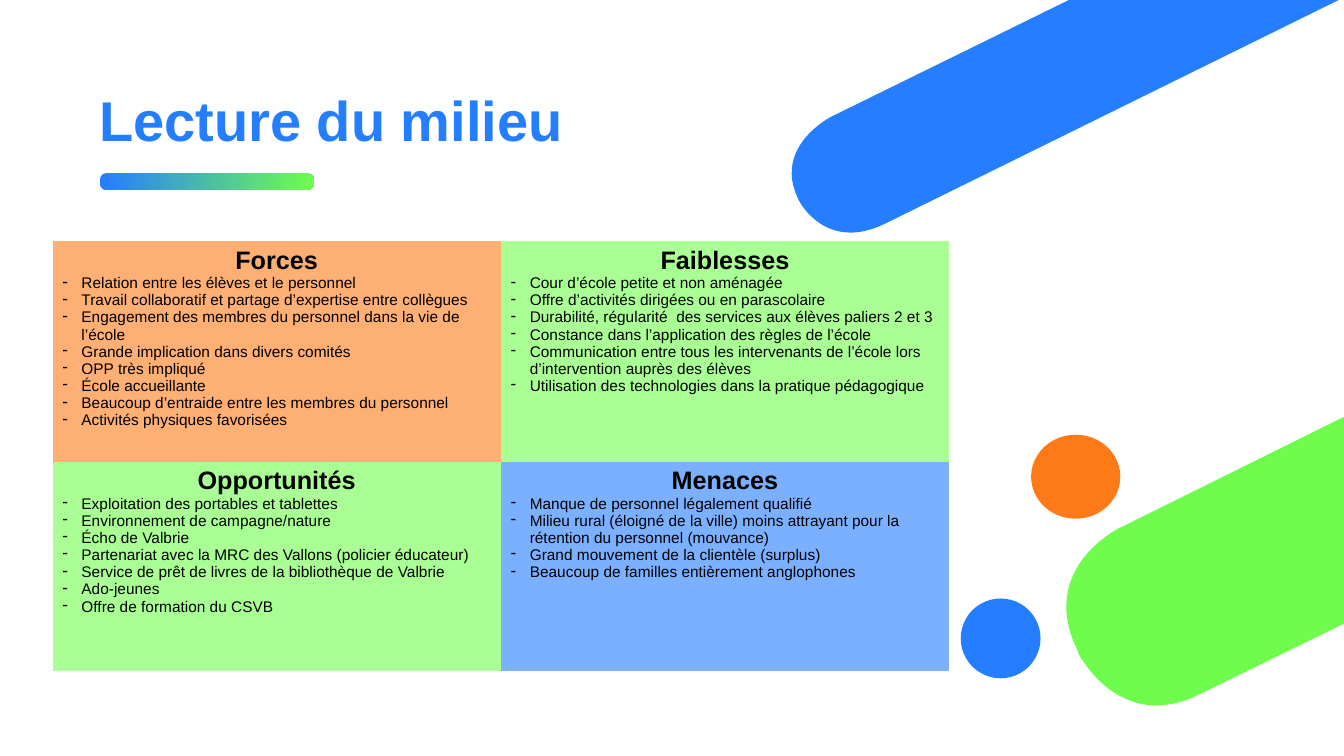
from dataclasses import dataclass
from typing import Any

from lxml.etree import SubElement
from pptx import Presentation
from pptx.dml.color import RGBColor
from pptx.enum.shapes import MSO_SHAPE
from pptx.enum.text import MSO_ANCHOR, MSO_AUTO_SIZE, PP_ALIGN
from pptx.oxml.ns import qn
from pptx.util import Pt

EMU_PER_PX = 9525
SLIDE_WIDTH, SLIDE_HEIGHT = 1280, 720
CURVE_STEPS = 24
FONT = "Arial"
NO_GRID_STYLE = "{2D5ABB26-0587-4C30-8999-92F81FD0307C}"

BLUE = RGBColor(0x25, 0x7D, 0xFF)
GREEN = RGBColor(0x6F, 0xFD, 0x4D)
ORANGE = RGBColor(0xFD, 0x7A, 0x17)
PALE_BLUE = RGBColor(0x7B, 0xB0, 0xFF)
PALE_GREEN = RGBColor(0xA9, 0xFE, 0x94)
PALE_ORANGE = RGBColor(0xFE, 0xAF, 0x74)
BLACK = RGBColor(0, 0, 0)

TITLE_FONT = {"name": FONT, "size": Pt(40), "bold": True}
HEADING_FONT = {"name": FONT, "size": Pt(18), "bold": True}
ITEM_FONT = {"name": FONT, "size": Pt(11), "bold": False}

Point = tuple[float, float]


@dataclass(frozen=True)
class Dot:
    left: int
    top: int
    width: int
    height: int
    color: RGBColor


@dataclass(frozen=True)
class Band:
    """A slanted band: two straight edges joined by a rounded end."""
    start: Point
    upper_curve: tuple[Point, Point, Point, Point]
    lower_curve: tuple[Point, Point, Point, Point]
    end: Point
    color: RGBColor


@dataclass(frozen=True)
class Quadrant:
    heading: str
    color: RGBColor
    items: tuple[str, ...]


DOTS = (
    Dot(915, 570, 76, 76, BLUE),
    Dot(982, 414, 85, 80, ORANGE),
)

BANDS = (
    Band((1280, 397), ((1066, 503), (1066, 503), (988, 541), (1026, 619)),
         ((1027, 622), (1027, 622), (1066, 700), (1143, 661)), (1280, 594), GREEN),
    Band((1018, 0), ((792, 111), (792, 111), (736, 139), (760, 189)),
         ((761, 191), (761, 191), (786, 241), (843, 213)), (1275, 0), BLUE),
)

TABLE_LEFT, TABLE_TOP, COLUMN_WIDTH = 50, 230, 427
ROW_HEIGHTS = (210, 199)
ITEM_INDENT = 18

QUADRANTS = (
    (
        Quadrant("Forces", PALE_ORANGE, (
            "Relation entre les élèves et le personnel",
            "Travail collaboratif et partage d’expertise entre collègues",
            "Engagement des membres du personnel dans la vie de l’école",
            "Grande implication dans divers comités",
            "OPP très impliqué",
            "École accueillante",
            "Beaucoup d’entraide entre les membres du personnel",
            "Activités physiques favorisées",
        )),
        Quadrant("Faiblesses", PALE_GREEN, (
            "Cour d’école petite et non aménagée",
            "Offre d’activités dirigées ou en parascolaire",
            "Durabilité, régularité  des services aux élèves paliers 2 et 3",
            "Constance dans l’application des règles de l’école",
            "Communication entre tous les intervenants de l’école lors "
            "d’intervention auprès des élèves",
            "Utilisation des technologies dans la pratique pédagogique",
        )),
    ),
    (
        Quadrant("Opportunités", PALE_GREEN, (
            "Exploitation des portables et tablettes",
            "Environnement de campagne/nature",
            "Écho de Valbrie",
            "Partenariat avec la MRC des Vallons (policier éducateur)",
            "Service de prêt de livres de la bibliothèque de Valbrie",
            "Ado-jeunes",
            "Offre de formation du CSVB",
        )),
        Quadrant("Menaces", PALE_BLUE, (
            "Manque de personnel légalement qualifié",
            "Milieu rural (éloigné de la ville) moins attrayant pour la "
            "rétention du personnel (mouvance)",
            "Grand mouvement de la clientèle (surplus)",
            "Beaucoup de familles entièrement anglophones",
        )),
    ),
)


def px(length: float) -> int:
    return round(length * EMU_PER_PX)


def apply_format(target: Any, values: dict[str, Any]) -> None:
    for attribute, value in values.items():
        setattr(target, attribute, value)


def paint(shape: Any, color: RGBColor) -> None:
    shape.shadow.inherit = False
    shape.line.fill.background()
    shape.fill.solid()
    shape.fill.fore_color.rgb = color


def curve_points(a: Point, b: Point, c: Point, d: Point) -> list[Point]:
    points = []
    for step in range(CURVE_STEPS + 1):
        t = step / CURVE_STEPS
        weights = ((1 - t) ** 3, 3 * t * (1 - t) ** 2, 3 * t * t * (1 - t), t ** 3)
        points.append(tuple(sum(w * p[axis] for w, p in zip(weights, (a, b, c, d)))
                            for axis in (0, 1)))
    return points


def draw_dot(slide: Any, dot: Dot) -> None:
    oval = slide.shapes.add_shape(MSO_SHAPE.OVAL, px(dot.left), px(dot.top),
                                  px(dot.width), px(dot.height))
    paint(oval, dot.color)


def draw_band(slide: Any, band: Band) -> None:
    outline = [*curve_points(*band.upper_curve), *curve_points(*band.lower_curve), band.end]
    builder = slide.shapes.build_freeform(px(band.start[0]), px(band.start[1]))
    builder.add_line_segments([(px(x), px(y)) for x, y in outline], close=True)
    paint(builder.convert_to_shape(), band.color)


def draw_underline(slide: Any) -> None:
    underline = slide.shapes.add_shape(MSO_SHAPE.ROUNDED_RECTANGLE,
                                       px(95), px(165), px(204), px(16))
    underline.adjustments[0] = 0.4
    paint(underline, BLUE)
    underline.fill.gradient()
    underline.fill.gradient_angle = 0
    for stop, color in zip(underline.fill.gradient_stops, (BLUE, GREEN)):
        stop.color.rgb = color


def write_title(slide: Any) -> None:
    title = slide.shapes.title
    apply_format(title, {"left": px(85), "top": px(48), "width": px(1104), "height": px(139)})
    apply_format(title.text_frame, {"text": "Lecture du milieu", "word_wrap": True,
                                    "auto_size": MSO_AUTO_SIZE.NONE,
                                    "vertical_anchor": MSO_ANCHOR.MIDDLE})
    heading = title.text_frame.paragraphs[0]
    apply_format(heading, {"alignment": PP_ALIGN.LEFT, "line_spacing": 0.9})
    apply_format(heading.runs[0].font, TITLE_FONT)
    heading.runs[0].font.color.rgb = BLUE


def write_run(paragraph: Any, text: str, font_values: dict[str, Any]) -> None:
    run = paragraph.add_run()
    run.text = text
    apply_format(run.font, font_values)
    run.font.color.rgb = BLACK


def fill_quadrant(cell: Any, quadrant: Quadrant) -> None:
    cell.fill.solid()
    cell.fill.fore_color.rgb = quadrant.color
    heading = cell.text_frame.paragraphs[0]
    heading.alignment = PP_ALIGN.CENTER
    write_run(heading, quadrant.heading, HEADING_FONT)
    for item in quadrant.items:
        line = cell.text_frame.add_paragraph()
        write_run(line, item, ITEM_FONT)
        properties = line._p.get_or_add_pPr()
        properties.set("marL", str(px(ITEM_INDENT)))
        properties.set("indent", str(-px(ITEM_INDENT)))
        SubElement(properties, qn("a:buChar"), char="-")


def draw_quadrants(slide: Any) -> None:
    table = slide.shapes.add_table(2, 2, px(TABLE_LEFT), px(TABLE_TOP),
                                   px(2 * COLUMN_WIDTH), px(sum(ROW_HEIGHTS))).table
    apply_format(table, {"first_row": False, "horz_banding": False})
    table._tbl.tblPr.find(qn("a:tableStyleId")).text = NO_GRID_STYLE
    for column in table.columns:
        column.width = px(COLUMN_WIDTH)
    for row, height, quadrants in zip(table.rows, ROW_HEIGHTS, QUADRANTS):
        row.height = px(height)
        for cell, quadrant in zip(row.cells, quadrants):
            fill_quadrant(cell, quadrant)


def main() -> None:
    deck = Presentation()
    apply_format(deck, {"slide_width": px(SLIDE_WIDTH), "slide_height": px(SLIDE_HEIGHT)})
    slide = deck.slides.add_slide(deck.slide_layouts[5])
    # Decoration
    for band in BANDS:
        draw_band(slide, band)
    for dot in DOTS:
        draw_dot(slide, dot)
    draw_underline(slide)
    # Content
    write_title(slide)
    draw_quadrants(slide)
    deck.save("out.pptx")


if __name__ == "__main__":
    main()
